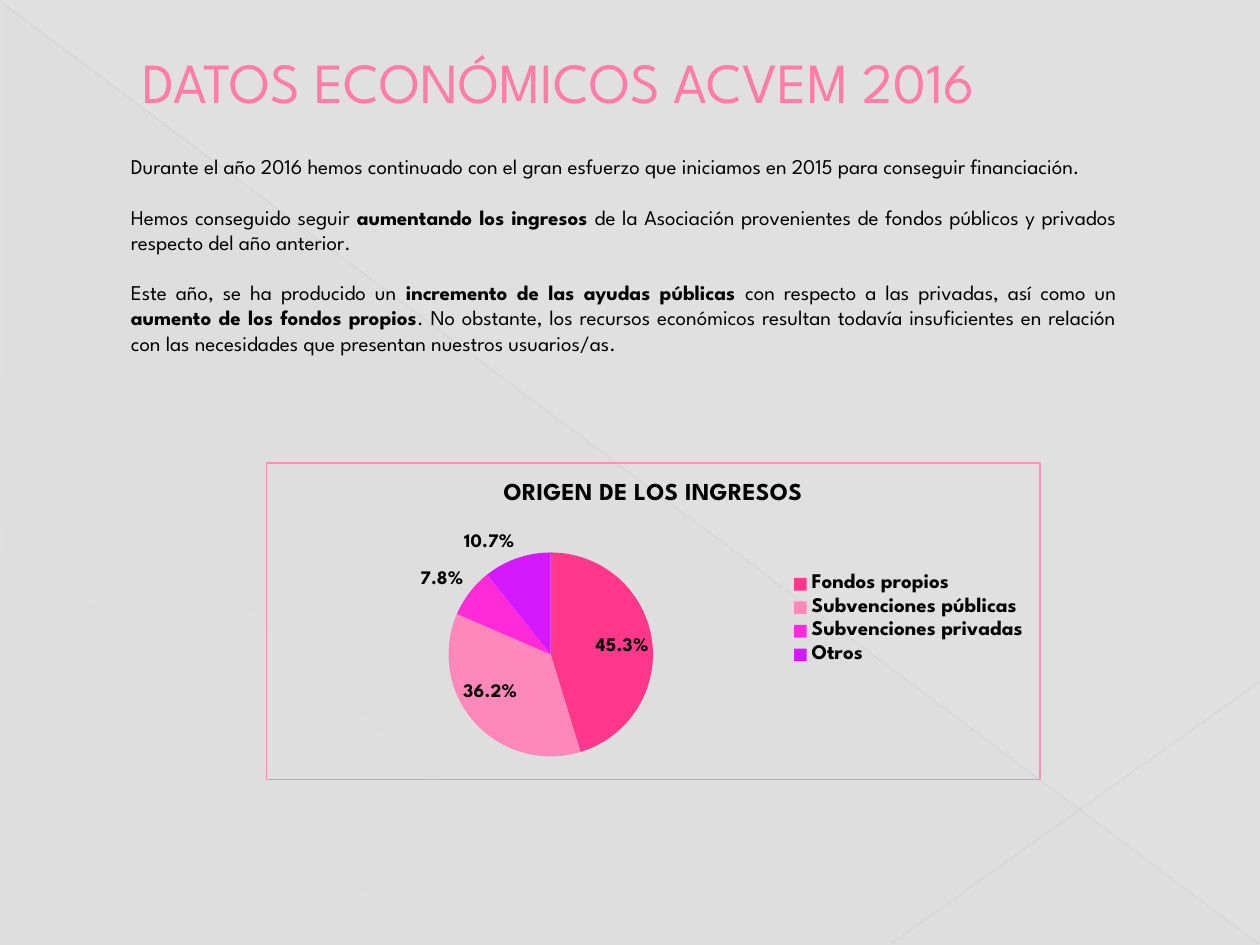
from lxml import etree
from pptx import Presentation
from pptx import util as u
from pptx.chart.data import CategoryChartData
from pptx.dml.color import RGBColor
from pptx.enum import chart as ch, shapes, text
from pptx.oxml import parse_xml
from pptx.oxml.ns import nsdecls, qn

FONT = "League Spartan"
BACKGROUND = RGBColor(0xE0, 0xE0, 0xE0)
BLACK = RGBColor(0, 0, 0)
TITLE_PINK = RGBColor(0xFF, 0x7D, 0xA7)
LINE_GRAY = RGBColor(0xBF, 0xBF, 0xBF)
SHORT_LINE_GRAY = RGBColor(0xC6, 0xC6, 0xC6)
SLICES = [RGBColor(0xFF, 0x38, 0x8C), RGBColor(0xFF, 0x88, 0xBA),
          RGBColor(0xFF, 0x2B, 0xD8), RGBColor(0xD5, 0x19, 0xFF)]


def add_run(p, words, size, color, bold=False):
    r = p.add_run()
    r.text = words
    r.font.name = FONT
    r.font.size = u.Pt(size)
    r.font.bold = bold
    r.font.color.rgb = color
    return r


def layout_xml(x, y, w, h, target=""):
    return parse_xml(
        f'<c:layout {nsdecls("c")}><c:manualLayout>{target}'
        '<c:xMode val="edge"/><c:yMode val="edge"/>'
        f'<c:x val="{x}"/><c:y val="{y}"/><c:w val="{w}"/><c:h val="{h}"/>'
        '</c:manualLayout></c:layout>')


prs = Presentation()
prs.slide_width, prs.slide_height = u.Inches(10), u.Inches(7.5)
s = prs.slides.add_slide(prs.slide_layouts[6])
s.background.fill.solid()
s.background.fill.fore_color.rgb = BACKGROUND

sp = s.shapes.add_shape(shapes.MSO_SHAPE.RIGHT_TRIANGLE, u.Inches(0.01), u.Inches(0.02),
                        u.Inches(9.98), u.Inches(7.48))
sp.shadow.inherit = False
sp.line.fill.background()
stops = "".join(
    f'<a:gs pos="{pos * 1000}"><a:srgbClr val="D2D2D2"><a:alpha val="{alpha * 1000}"/></a:srgbClr></a:gs>'
    for pos, alpha in [(0, 10), (70, 8), (100, 1)])
sp._element.spPr.find(qn("a:prstGeom")).addnext(parse_xml(
    f'<a:gradFill {nsdecls("a")}><a:gsLst>{stops}</a:gsLst>'
    '<a:lin ang="7980000" scaled="0"/></a:gradFill>'))

for x1, y1, x2, y2, color, width, alpha in [
        (0, 0.01, 9.99, 7.49, LINE_GRAY, 0.39, 35),
        (10, 5.41, 7.07, 7.49, SHORT_LINE_GRAY, 0.47, 45)]:
    line = s.shapes.add_connector(shapes.MSO_CONNECTOR.STRAIGHT, u.Inches(x1), u.Inches(y1),
                                  u.Inches(x2), u.Inches(y2))
    line.line.color.rgb = color
    line.line.width = u.Pt(width)
    spPr = line._element.spPr
    clr = spPr.find(".//" + qn("a:srgbClr"))
    etree.SubElement(clr, qn("a:alpha")).set("val", str(alpha * 1000))
    etree.SubElement(spPr, qn("a:effectLst"))

title = s.shapes.add_textbox(u.Inches(0.5), u.Inches(0.29), u.Inches(9), u.Inches(0.7))
tf = title.text_frame
tf.word_wrap = True
tf.vertical_anchor = text.MSO_ANCHOR.MIDDLE
p = tf.paragraphs[0]
p._p.get_or_add_pPr().set("marL", str(u.Inches(0.53)))
r = add_run(p, "DATOS ECONÓMICOS ACVEM 2016", 32.4, TITLE_PINK)
r.font._element.insert(0, parse_xml(
    f'<a:ln {nsdecls("a")} w="6350"><a:solidFill><a:srgbClr val="B12761"/></a:solidFill></a:ln>'))

cd = CategoryChartData()
cd.categories = ["Fondos propios", "Subvenciones públicas", "Subvenciones privadas", "Otros"]
cd.add_series("Series 1", (45.3, 36.2, 7.8, 10.7))
chart = s.shapes.add_chart(ch.XL_CHART_TYPE.PIE, u.Inches(2.11), u.Inches(3.67),
                           u.Inches(6.15), u.Inches(2.52), cd).chart
chart.font.name = FONT
chart.font.size = u.Pt(18)
chart.font.color.rgb = BLACK
chart._chartSpace.find(qn("c:txPr")).addprevious(parse_xml(
    f'<c:spPr {nsdecls("c", "a")}><a:noFill/><a:ln w="9525"><a:solidFill>'
    '<a:srgbClr val="FF8EBA"/></a:solidFill></a:ln></c:spPr>'))
chart.has_title = True
add_run(chart.chart_title.text_frame.paragraphs[0], "ORIGEN DE LOS INGRESOS", 14, BLACK, True)
chart.chart_title.include_in_layout = False

chart.has_legend = True
legend = chart.legend
legend.position = ch.XL_LEGEND_POSITION.RIGHT
legend.include_in_layout = False
legend.font.name = FONT
legend.font.size = u.Pt(12)
legend.font.bold = True
legend.font.color.rgb = BLACK
legend._element.find(qn("c:legendPos")).addnext(layout_xml(0.67, 0.34, 0.32, 0.31))

plot_area = chart._chartSpace.chart.plotArea
for old in plot_area.findall(qn("c:layout")):
    plot_area.remove(old)
plot_area.insert(0, layout_xml(0.235, 0.283, 0.265, 0.645, '<c:layoutTarget val="inner"/>'))

plot = chart.plots[0]
plot.vary_by_categories = True
series = plot.series[0]
labels = series.data_labels
labels.show_percentage = True
labels.show_value = False
labels.number_format = "0.0%"
labels.number_format_is_linked = False
labels.position = ch.XL_LABEL_POSITION.BEST_FIT
labels.font.name = FONT
labels.font.size = u.Pt(11)
labels.font.bold = True
labels.font.color.rgb = BLACK
for i, color in enumerate(SLICES):
    fill = series.points[i].format.fill
    fill.solid()
    fill.fore_color.rgb = color

body = s.shapes.add_textbox(u.Inches(0.94), u.Inches(1.17), u.Inches(8.02), u.Inches(2.12))
tf = body.text_frame
tf.word_wrap = True
tf.auto_size = text.MSO_AUTO_SIZE.SHAPE_TO_FIT_TEXT
paragraphs = [
    [("Durante el año 2016 hemos continuado con el gran esfuerzo que iniciamos en 2015 "
      "para conseguir financiación.", False)],
    [("Hemos conseguido seguir ", False), ("aumentando los ingresos ", True),
     ("de la Asociación provenientes de fondos públicos y privados respecto del año anterior.", False)],
    [("Este año, se ha producido un ", False), ("incremento de las ayudas públicas ", True),
     ("con respecto a las privadas, así como un ", False), ("aumento de los fondos propios", True),
     (". No obstante, los recursos económicos resultan todavía insuficientes en relación "
      "con las necesidades que presentan nuestros usuarios/as.", False)],
]
for i, runs in enumerate(paragraphs):
    p = tf.add_paragraph() if i else tf.paragraphs[0]
    p.alignment = text.PP_ALIGN.JUSTIFY
    if i:
        p.space_before = u.Pt(14.4)
    for words, bold in runs:
        add_run(p, words, 12, BLACK, bold)

prs.save("out.pptx")
